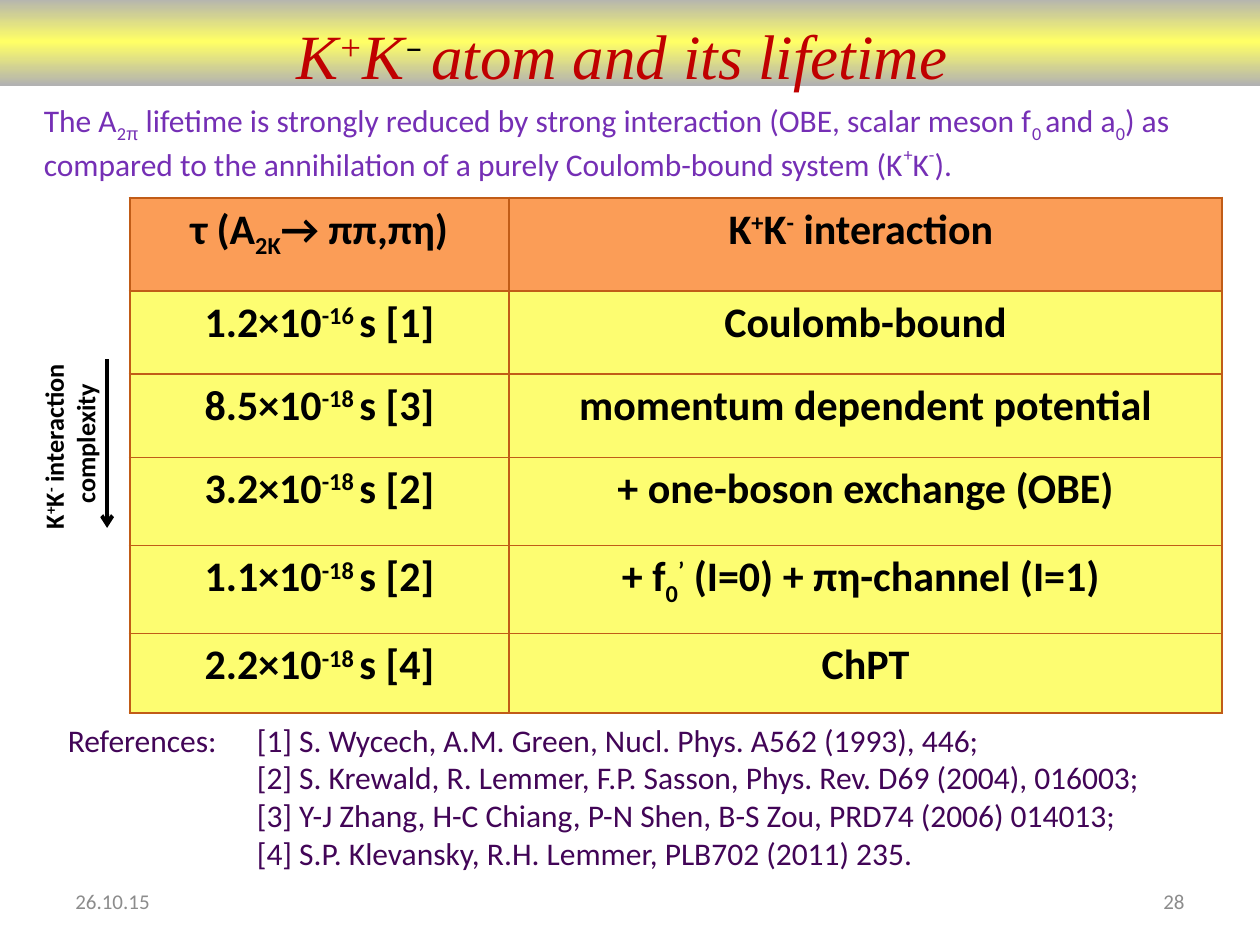
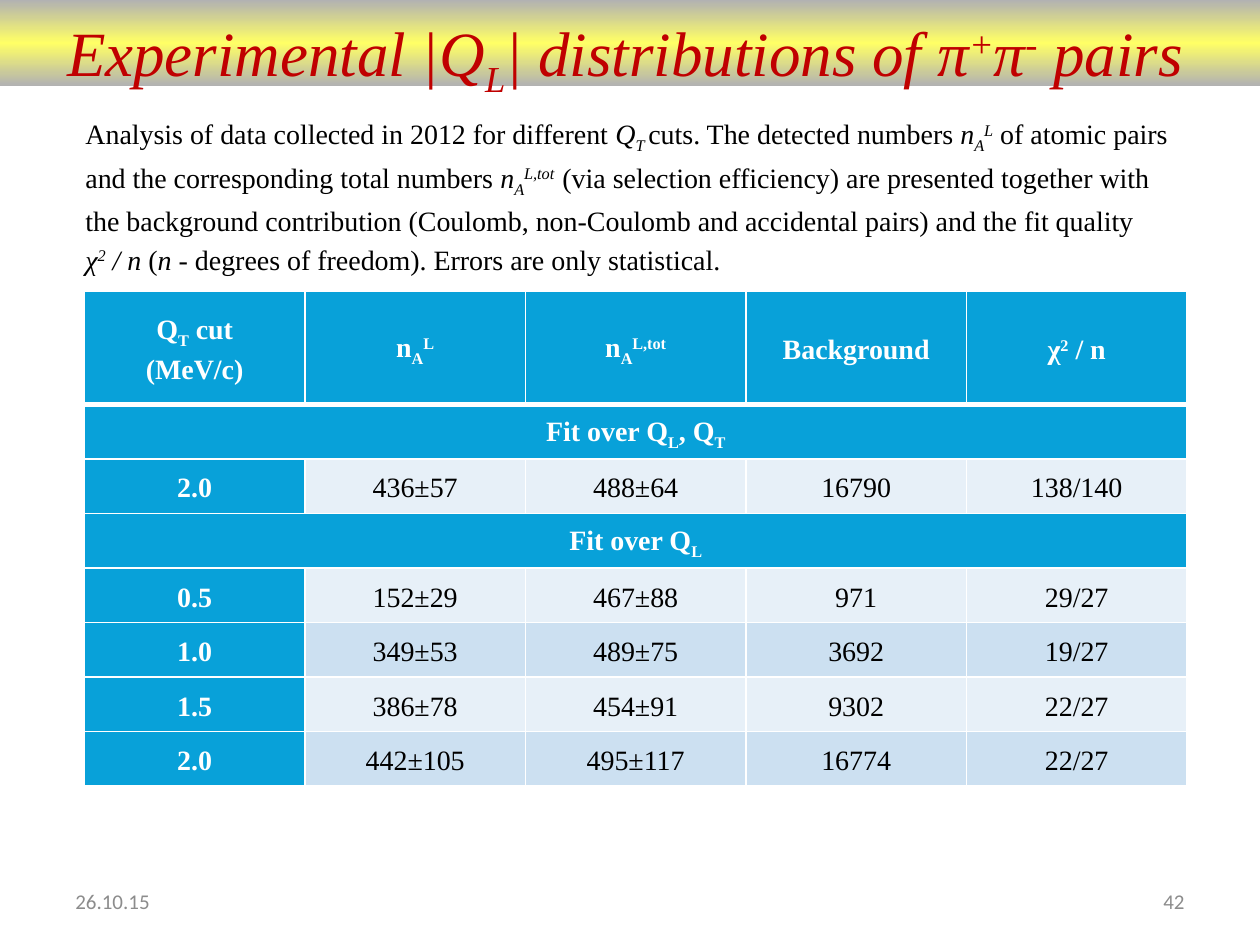
from copy import deepcopy
from dataclasses import dataclass, replace

from lxml import etree
from pptx import Presentation
from pptx import util as u
from pptx.dml.color import RGBColor
from pptx.enum import shapes, text
from pptx.oxml.ns import qn

MID, LEFT, RIGHT = text.PP_ALIGN.CENTER, text.PP_ALIGN.LEFT, text.PP_ALIGN.RIGHT


@dataclass(frozen=True)
class Style:
    size: int
    font: str
    color: str
    bold: bool = False
    ital: bool = False
    base: int = 0


class Theme:
    sans, serif = "Calibri", "Times New Roman"
    black, white = "000000", "FFFFFF"
    edge, gold, peach = "C15C17", "FDFD71", "FB9D57"
    blue, pale, tint = "08A1D9", "E7F0F8", "CCE0F1"
    band = ("B2B2B2", "FFFF66", "B2B2B2")
    title = Style(36, serif, "C00000", ital=True)
    foot = Style(12, sans, "8C8C8C")
    intro = Style(18, sans, "752FB5")
    refs = Style(18, sans, "420557")
    side = Style(15, sans, black, bold=True)
    grid = Style(24, sans, black, bold=True)
    body = Style(16, serif, black)
    head = Style(16, serif, white, bold=True)


# Pieces of rich text: plain strings, or a string with style changes
def piece(words, **change):
    return words, change


def sup(words, **change):
    return piece(words, **{"base": 30, **change})


def sub(words, **change):
    return piece(words, base=-25, **change)


def ital(words):
    return piece(words, ital=True)


def add_run(para, part, style):
    words, change = (part, {}) if isinstance(part, str) else part
    look = replace(style, **change)
    run = para.add_run()
    run.text = words
    font = run.font
    font.size, font.name = u.Pt(look.size), look.font
    font.bold, font.italic = look.bold, look.ital
    font.color.rgb = RGBColor.from_string(look.color)
    if look.base:
        run._r.get_or_add_rPr().set("baseline", str(look.base * 1000))


def write(frame, lines, style, align=LEFT, space=None):
    """Fill a text frame; each line is a list of pieces."""
    for i, line in enumerate(lines):
        para = frame.paragraphs[0] if i == 0 else frame.add_paragraph()
        para.alignment = align
        if space:
            para.line_spacing = space
        for part in line:
            add_run(para, part, style)


def inches(*sizes):
    return [u.Inches(s) for s in sizes]


def add_text(slide, box, lines, style, align=LEFT, wrap=True, space=None,
             anchor=text.MSO_ANCHOR.TOP, turn=0):
    shape = slide.shapes.add_textbox(*inches(*box))
    shape.rotation = turn
    frame = shape.text_frame
    frame.word_wrap, frame.vertical_anchor = wrap, anchor
    write(frame, lines, style, align, space)


# Parts shared by the slides
def add_band(slide, top, height):
    band = slide.shapes.add_shape(shapes.MSO_SHAPE.RECTANGLE,
                                  *inches(0, top, 10, height))
    band.shadow.inherit = False
    band.line.fill.background()
    band.fill.gradient()
    band.fill.gradient_angle = 90
    stops = band._element.spPr.find(".//" + qn("a:gsLst"))
    stops.append(deepcopy(stops[-1]))
    for i, (stop, color) in enumerate(zip(band.fill.gradient_stops, Theme.band)):
        stop.position = i / 2
        stop.color.rgb = RGBColor.from_string(color)


def add_title(slide, box, parts):
    add_text(slide, box, [parts], Theme.title, MID, wrap=False)


def add_foot(slide, number):
    for left, words, align in ((0.5, "26.10.15", LEFT), (7.17, number, RIGHT)):
        add_text(slide, (left, 6.95, 2.33, 0.4), [[words]], Theme.foot, align,
                 anchor=text.MSO_ANCHOR.MIDDLE)


def add_arrow(slide, x, top, end):
    line = slide.shapes.add_connector(shapes.MSO_CONNECTOR.STRAIGHT,
                                      *inches(x, top, x, end))
    line.line.width = u.Pt(2.25)
    line.line.color.rgb = RGBColor.from_string(Theme.black)
    etree.SubElement(line.line._get_or_add_ln(), qn("a:tailEnd"), type="arrow")
    etree.SubElement(line._element.spPr, qn("a:effectLst"))


# Tables
def add_grid(slide, left, top, cols, rows):
    table = slide.shapes.add_table(len(rows), len(cols), *inches(
        left, top, sum(cols), sum(rows))).table
    for col, width in zip(table.columns, cols):
        col.width = u.Inches(width)
    for row, height in zip(table.rows, rows):
        row.height = u.Inches(height)
    return table


def paint(cell, fill, edge, **widths):
    """Set the fill and the four edges of a cell."""
    cell.fill.solid()
    cell.fill.fore_color.rgb = RGBColor.from_string(fill)
    props = cell._tc.get_or_add_tcPr()
    for i, side in enumerate("LRTB"):
        line = etree.Element(qn("a:ln" + side), w=str(u.Pt(widths.get(side, 1))))
        solid = etree.SubElement(line, qn("a:solidFill"))
        etree.SubElement(solid, qn("a:srgbClr"), val=edge)
        props.insert(i, line)


def add_times(slide):
    def time(lead, power, ref):
        return [f"{lead}×10", sup(f"-{power} "), f"s [{ref}]"]

    rows = [
        (["τ (A", sub("2K"), "→ ππ,πη)"],
         ["K", sup("+"), "K", sup("-"), " interaction "]),
        (time("1.2", 16, 1), ["Coulomb-bound"]),
        (time("8.5", 18, 3), ["momentum dependent potential"]),
        (time("3.2", 18, 2), ["+ one-boson exchange (OBE)"]),
        (time("1.1", 18, 2),
         ["+ f", sub("0"), sup("’"), " (I=0) + πη-channel (I=1) "]),
        (time("2.2", 18, 4), ["ChPT"]),
    ]
    table = add_grid(slide, 1.03, 1.57, (3.01, 5.66),
                     (0.74, 0.66, 0.66, 0.7, 0.7, 0.63))
    last = len(rows) - 1
    for r, row in enumerate(rows):
        for c, parts in enumerate(row):
            cell = table.cell(r, c)
            paint(cell, Theme.gold if r else Theme.peach, Theme.edge,
                  L=1 if c else 1.5, T=1 if r else 1.5,
                  B=1.5 if r == last else 1)
            write(cell.text_frame, [parts], Theme.grid, MID)


def add_fits(slide):
    heads = [
        [["Q", sub("T"), " cut"], ["(MeV/c)"]],
        [["n", sub("A"), sup("L")]],
        [["n", sub("A"), sup("L,tot")]],
        [["Background"]],
        [["χ", sup("2"), " / n"]],
    ]
    both = ["Fit over Q", sub("L"), ", Q", sub("T")]
    single = ["Fit over Q", sub("L")]
    rows = [
        heads,
        [[both]],
        ["2.0", "436±57", "488±64", "16790", "138/140"],
        [[single]],
        ["0.5", "152±29", "467±88", "971", "29/27"],
        ["1.0", "349±53", "489±75", "3692", "19/27"],
        ["1.5", "386±78", "454±91", "9302", "22/27"],
        ["2.0", "442±105", "495±117", "16774", "22/27"],
    ]
    wide, rest = len(heads), len(rows) - 1
    table = add_grid(slide, 0.67, 2.31, [1.75] * wide,
                     [0.9] + [(3.93 - 0.9) / rest] * rest)
    for r, row in enumerate(rows):
        for c in range(wide):
            cell = table.cell(r, c)
            data = c > 0 and isinstance(row[0], str)
            fill = (Theme.tint if r % 2 else Theme.pale) if data else Theme.blue
            paint(cell, fill, Theme.white,
                  T=3 if r == 1 else 1, B=1 if r else 3)
            cell.vertical_anchor = text.MSO_ANCHOR.MIDDLE
            cell.margin_left = cell.margin_right = u.Inches(0.07)
            cell.margin_top = cell.margin_bottom = 0
            if c < len(row):
                lines = [[row[c]]] if isinstance(row[c], str) else row[c]
                write(cell.text_frame, lines,
                      Theme.body if data else Theme.head, MID, 1.15)
        if len(row) == 1:
            table.cell(r, 0).merge(table.cell(r, wide - 1))


# Slides
def kaon(slide):
    add_times(slide)
    add_text(slide, (1.94, 5.67, 7.75, 1.3), [
        ["[1] S. Wycech, A.M. Green, Nucl. Phys. A562 (1993), 446;"],
        ["[2] S. Krewald, R. Lemmer, F.P. Sasson, Phys. Rev. D69 (2004), 016003;"],
        ["[3] Y-J Zhang, H-C Chiang, P-N Shen, B-S Zou, PRD74 (2006) 014013;"],
        ["[4] S.P. Klevansky, R.H. Lemmer, PLB702 (2011) 235."],
    ], Theme.refs)
    add_arrow(slide, 0.85, 2.85, 4.19)
    add_text(slide, (-0.28, 3.22, 1.66, 0.6),
             [["K", sup("+"), "K", sup("-"), " interaction "], ["complexity"]],
             Theme.side, MID, wrap=False, turn=270)
    add_text(slide, (0.25, 0.75, 9.5, 0.7), [[
        "The A", sub("2"), sub("π", font="Arial"),
        " lifetime is strongly reduced by strong interaction "
        "(OBE, scalar meson f", sub("0 "), "and a", sub("0"),
        ") as compared to the annihilation of a purely Coulomb-bound system (K",
        sup("+", base=46), "K", sup("-", base=46), ").",
    ]], Theme.intro)
    add_text(slide, (0.44, 5.67, 1.4, 0.4), [["References:"]], Theme.refs,
             wrap=False)
    add_foot(slide, "28")
    add_band(slide, -0.02, 0.7)
    dash = sup("– ", font=Theme.sans, color=Theme.black, ital=False)
    add_title(slide, (2.23, 0.08, 5.41, 0.5),
              ["K", sup("+"), "K", dash, "atom and its lifetime"])


def pion(slide):
    add_text(slide, (0.58, 0.83, 8.83, 1.34), [[
        "Analysis of data collected in 2012 for different ",
        ital("Q"), sub("T ", ital=True), "cuts. The detected numbers ",
        ital("n"), sub("A", ital=True), sup("L", ital=True),
        " of atomic pairs and the corresponding total numbers ",
        ital("n"), sub("A", ital=True), sup("L,tot  ", ital=True),
        "(via selection efficiency) are presented together with the background "
        "contribution (Coulomb, non-Coulomb and accidental pairs) and the fit "
        "quality ", ital("χ"), sup("2", ital=True), ital(" / n"), " (",
        ital("n"), " - degrees of freedom). Errors are only statistical.",
    ]], Theme.body, space=1.15)
    add_fits(slide)
    add_band(slide, 0, 0.68)
    add_title(slide, (0.21, 0.06, 9.5, 0.56), [
        "Experimental |Q", sub("L"), "| distributions of π", sup("+"), "π",
        sup("-"), " pairs"])
    add_foot(slide, "42")


def main():
    deck = Presentation()
    deck.slide_width, deck.slide_height = inches(10, 7.5)
    for build in (kaon, pion):
        build(deck.slides.add_slide(deck.slide_layouts[6]))
    deck.save("out.pptx")


if __name__ == "__main__":
    main()
